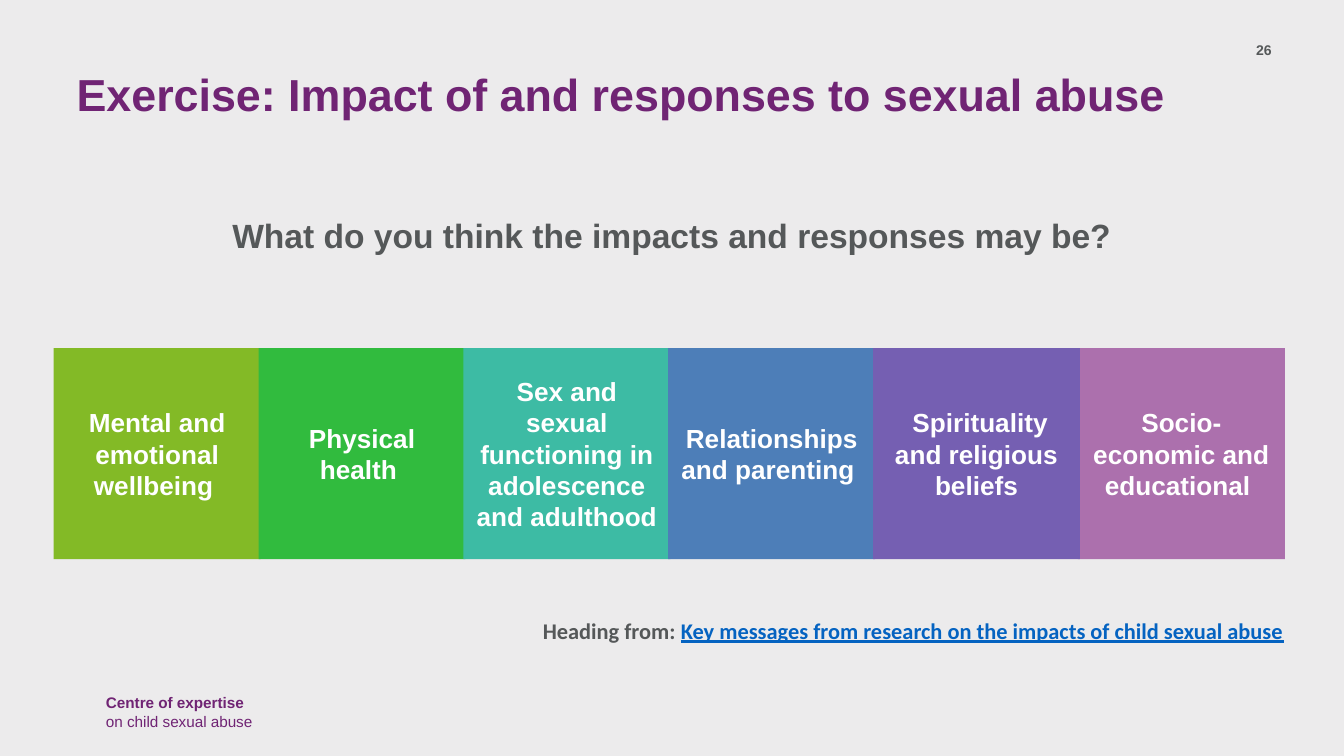
from dataclasses import dataclass
from typing import NamedTuple

from pptx import Presentation
from pptx import util as u
from pptx.dml.color import RGBColor
from pptx.enum import shapes, text

CELL = u.Inches(0.1)
COLS, ROWS = 100, 56.25
HUES = {
    "page": "ECEBEC", "plum": "702474", "grey": "555859", "white": "FFFFFF",
    "link": "0563C1", "lime": "83BA26", "green": "31BB3E", "teal": "3DBBA4",
    "blue": "4D7EB8", "mauve": "AC70AD", "violet": "755FB2",
}
ALIGN = text.PP_ALIGN


class Area(NamedTuple):
    col: float
    row: float
    wide: float
    high: float


class Run(NamedTuple):
    words: str
    hue: str
    bold: bool = True
    under: bool = False


@dataclass
class Label:
    area: Area
    lines: list[list[Run]]
    size: float
    align: ALIGN = ALIGN.LEFT
    font: str = "Arial"


@dataclass
class Tile:
    slot: int
    words: str
    hue: str


LABELS = [
    Label(Area(6.9, 51.1, 17.9, 3.8),
          [[Run("Centre of expertise", "plum")],
           [Run("on child sexual abuse", "plum", False)]], 8.2),
    Label(Area(91.5, 2.6, 5.1, 2.6), [[Run("26", "grey")]], 7.5, ALIGN.CENTER),
    Label(Area(0, 15.5, COLS, 4),
          [[Run("What do you think the impacts and responses may be?", "grey")]],
          18, ALIGN.CENTER),
    Label(Area(23.2, 45.4, 73.3, 3),
          [[Run("Heading from: ", "grey"),
            Run("Key messages from research on the impacts of child sexual abuse",
                "link", under=True)]], 12, ALIGN.RIGHT, "Calibri"),
]
TILES = [
    Tile(0, "Mental and emotional wellbeing ", "lime"),
    Tile(1, "Physical health ", "green"),
    Tile(2, "Sex and sexual functioning in adolescence and adulthood ", "teal"),
    Tile(3, "Relationships and parenting ", "blue"),
    Tile(5, "Socio-economic and educational ", "mauve"),
    Tile(4, " Spirituality and religious beliefs", "violet"),
]
FIRST = Area(4, 25.9, 15.4, 15.7)
STEP = (80.2 - FIRST.col) / (len(TILES) - 1)


def tint(name: str) -> RGBColor:
    return RGBColor.from_string(HUES[name])


def apply(item, look: dict) -> None:
    for key, value in look.items():
        setattr(item, key, value)


def cells(area: Area) -> list[int]:
    return [round(part * CELL) for part in area]


def write(para, runs: list[Run], size: float, align: ALIGN, font: str = "Arial") -> None:
    para.alignment = align
    for part in runs:
        run = para.add_run()
        run.text = part.words
        apply(run.font, {"name": font, "size": u.Pt(size), "bold": part.bold,
                         "underline": part.under or None})
        run.font.color.rgb = tint(part.hue)


def draw_label(slide, label: Label) -> None:
    frame = slide.shapes.add_textbox(*cells(label.area)).text_frame
    frame.word_wrap = True
    for spot, runs in enumerate(label.lines):
        para = frame.add_paragraph() if spot else frame.paragraphs[0]
        write(para, runs, label.size, label.align, label.font)


def draw_tile(slide, tile: Tile) -> None:
    area = FIRST._replace(col=FIRST.col + tile.slot * STEP)
    box = slide.shapes.add_shape(shapes.MSO_SHAPE.RECTANGLE, *cells(area))
    box.shadow.inherit = False
    box.fill.solid()
    box.fill.fore_color.rgb = tint(tile.hue)
    box.line.fill.background()
    apply(box.text_frame, {"word_wrap": True,
                           "vertical_anchor": text.MSO_ANCHOR.MIDDLE,
                           "margin_left": u.Inches(0.08),
                           "margin_right": u.Inches(0.08)})
    write(box.text_frame.paragraphs[0], [Run(tile.words, "white")], 14, ALIGN.CENTER)


def draw_title(slide, words: str) -> None:
    title = slide.shapes.title
    spots = cells(Area(4.7, 4.9, 90.9, 7))
    apply(title, dict(zip(("left", "top", "width", "height"), spots)))
    apply(title.text_frame, {"word_wrap": True, "auto_size": text.MSO_AUTO_SIZE.NONE,
                             "vertical_anchor": text.MSO_ANCHOR.TOP})
    para = title.text_frame.paragraphs[0]
    para.line_spacing = 0.9
    write(para, [Run(words, "plum")], 24, ALIGN.LEFT)


def main() -> None:
    deck = Presentation()
    apply(deck, {"slide_width": COLS * CELL, "slide_height": round(ROWS * CELL)})
    slide = deck.slides.add_slide(deck.slide_layouts.get_by_name("Title Only"))
    slide.background.fill.solid()
    slide.background.fill.fore_color.rgb = tint("page")
    draw_title(slide, "Exercise: Impact of and responses to sexual abuse")
    for tile in TILES:
        draw_tile(slide, tile)
    for label in LABELS:
        draw_label(slide, label)
    deck.save("out.pptx")


if __name__ == "__main__":
    main()
